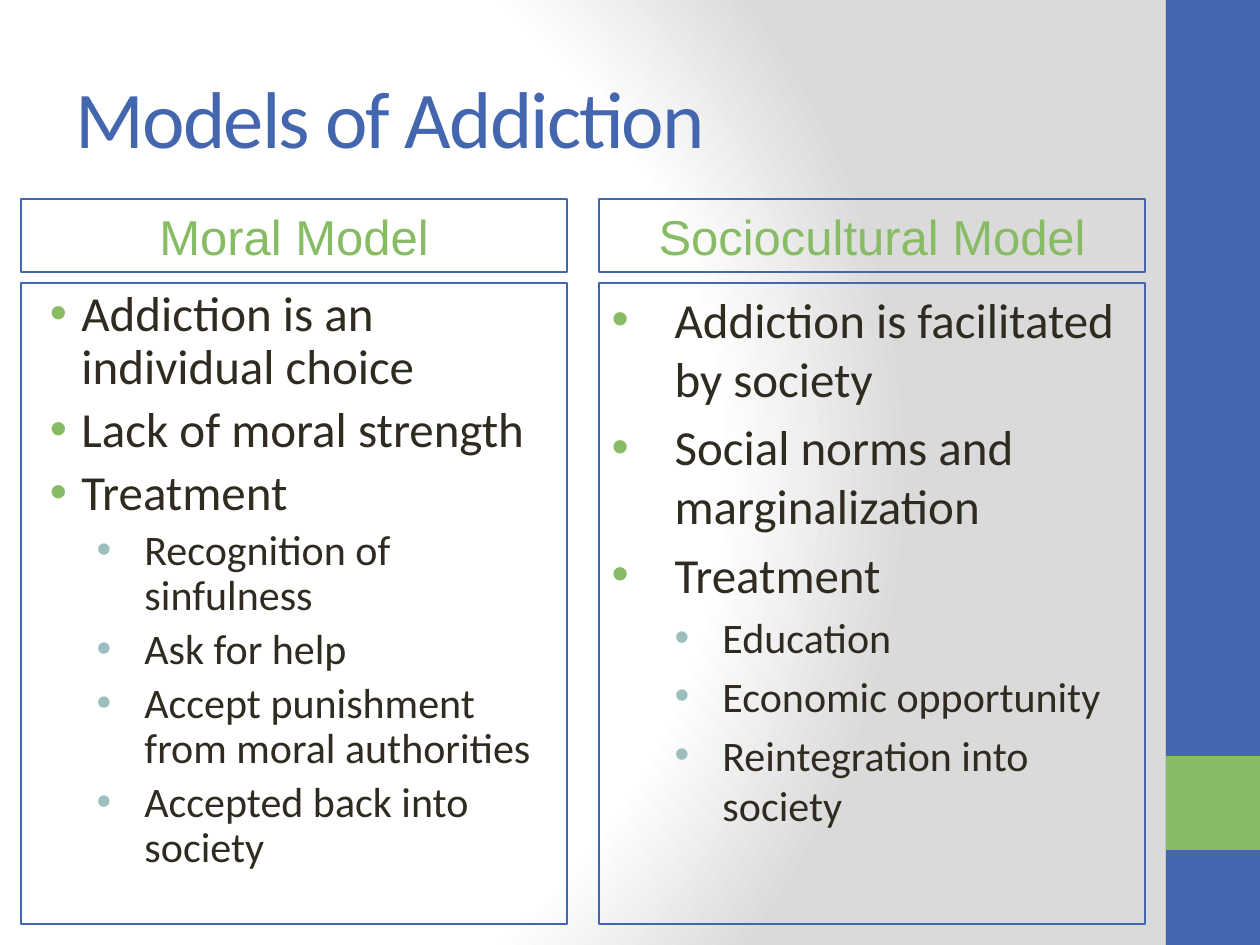
"""Build a slide that compares the moral and sociocultural models of addiction."""
import pptx
import pptx.dml.color
import pptx.enum.shapes
import pptx.enum.text
import pptx.oxml
import pptx.oxml.ns
import pptx.util

BLUE, GREEN, TEAL, INK = "4466AF", "88BC64", "9CBEBD", "2F2B20"
TITLE = "Models of Addiction"
BARS = [(0, 945, BLUE), (756, 94, GREEN)]
MODELS = [
    {
        "head": "Moral Model",
        "space": 0.9,
        "dents": [(0.38, -0.25), (0.88, -0.38)],
        "points": [
            (0, "Addiction is an individual choice"),
            (0, "Lack of moral strength"),
            (0, "Treatment"),
            (1, "Recognition of sinfulness"),
            (1, "Ask for help"),
            (1, "Accept punishment from moral authorities"),
            (1, "Accepted back into society"),
        ],
    },
    {
        "head": "Sociocultural Model",
        "space": 1.0,
        "dents": [(0.5, -0.5), (0.88, -0.38)],
        "points": [
            (0, "Addiction is facilitated by society"),
            (0, "Social norms and marginalization"),
            (0, "Treatment"),
            (1, "Education"),
            (1, "Economic opportunity"),
            (1, "Reintegration into society"),
        ],
    },
]
LEFT, STEP, WIDE = 21, 578, 546
LEVELS = [(28, GREEN), (24, TEAL)]
NS = pptx.oxml.ns.nsdecls("a", "p")
STOPS = "".join(
    f'<a:gs pos="{pos}000"><a:srgbClr val="{tint}"/></a:gs>'
    for pos, tint in [(0, "FFFFFF"), (75, "FFFFFF"), (100, "DADADA")]
)
BACK = (
    f'<p:bg {NS}><p:bgPr><a:gradFill rotWithShape="1"><a:gsLst>{STOPS}</a:gsLst>'
    '<a:path path="circle"><a:fillToRect l="20000" t="50000" r="100000" b="50000"/>'
    "</a:path></a:gradFill><a:effectLst/></p:bgPr></p:bg>"
)


def px(count):
    return pptx.util.Emu(round(count * 914400 / 126))


def color(code):
    return pptx.dml.color.RGBColor.from_string(code)


def place(shape, left, top, width, height):
    shape.left, shape.top = px(left), px(top)
    shape.width, shape.height = px(width), px(height)


def frame(shape):
    shape.fill.background()
    shape.line.color.rgb = color(BLUE)
    shape.line.width = pptx.util.Pt(0.75)


def style(para, size, font, code):
    for run in para.runs:
        run.font.size = pptx.util.Pt(size)
        run.font.name = font
        run.font.color.rgb = color(code)


def add_box(slide, left, top, width, height):
    kind = pptx.enum.shapes.MSO_SHAPE.RECTANGLE
    shape = slide.shapes.add_shape(kind, px(left), px(top), px(width), px(height))
    shape.shadow.inherit = False
    return shape


def add_head(slide, left, text):
    shape = add_box(slide, left, 199, WIDE, 73)
    frame(shape)
    shape.text_frame.text = text
    shape.text_frame.word_wrap = True
    para = shape.text_frame.paragraphs[0]
    para.alignment = pptx.enum.text.PP_ALIGN.CENTER
    style(para, 28, "Arial", GREEN)


def fill_list(shape, left, model):
    place(shape, left, 283, WIDE, 641)
    frame(shape)
    body = shape.text_frame
    body.text = "\n".join(text for level, text in model["points"])
    body.auto_size = pptx.enum.text.MSO_AUTO_SIZE.NONE
    for para, (level, text) in zip(body.paragraphs, model["points"]):
        size, tint = LEVELS[level]
        para.level = level
        para.line_spacing = model["space"]
        style(para, size, "Calibri", INK)
        props = para._p.get_or_add_pPr()
        for name, inch in zip(("marL", "indent"), model["dents"][level]):
            props.set(name, str(pptx.util.Inches(inch)))
        for mark in (
            f'<a:buClr {NS}><a:srgbClr val="{tint}"/></a:buClr>',
            f'<a:buFont {NS} typeface="Arial"/>',
            f'<a:buChar {NS} char="•"/>',
        ):
            props.append(pptx.oxml.parse_xml(mark))


def add_title(shape):
    place(shape, 63, 38, 1050, 157)
    shape.text_frame.text = TITLE
    shape.text_frame.auto_size = pptx.enum.text.MSO_AUTO_SIZE.NONE
    shape.text_frame.vertical_anchor = pptx.enum.text.MSO_ANCHOR.MIDDLE
    para = shape.text_frame.paragraphs[0]
    para.alignment = pptx.enum.text.PP_ALIGN.LEFT
    style(para, 46, "Calibri", BLUE)
    para.runs[0]._r.get_or_add_rPr().set("spc", "-100")


def main():
    deck = pptx.Presentation()
    deck.slide_width, deck.slide_height = px(1260), px(945)
    slide = deck.slides.add_slide(deck.slide_layouts[3])
    slide.element.cSld.insert(0, pptx.oxml.parse_xml(BACK))
    for top, height, code in BARS:
        bar = add_box(slide, 1166, top, 94, height)
        bar.fill.solid()
        bar.fill.fore_color.rgb = color(code)
        bar.line.fill.background()
    add_title(slide.shapes.title)
    for spot, model in enumerate(MODELS):
        left = LEFT + spot * STEP
        fill_list(slide.placeholders[spot + 1], left, model)
        add_head(slide, left, model["head"])
    deck.save("out.pptx")


if __name__ == "__main__":
    main()
